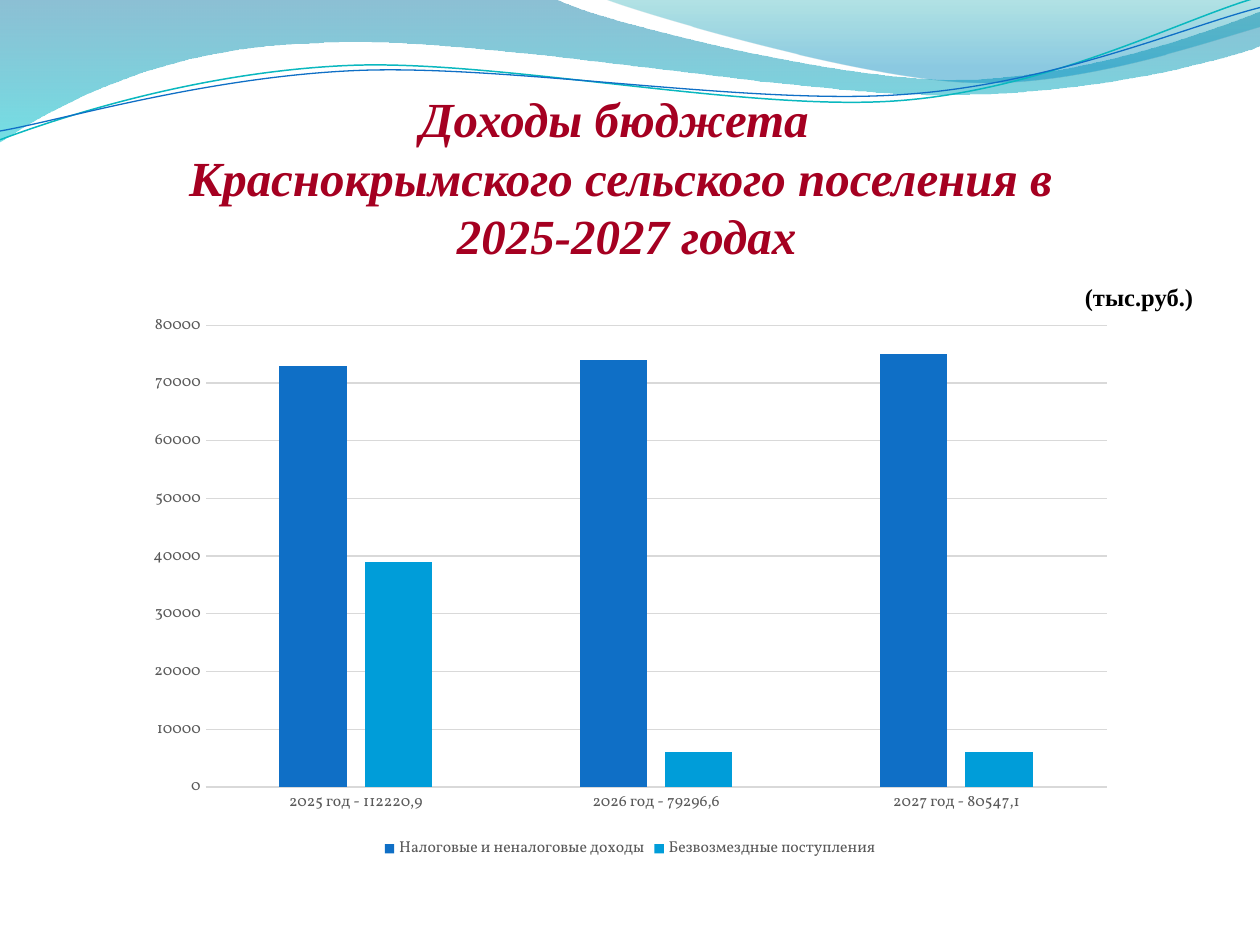
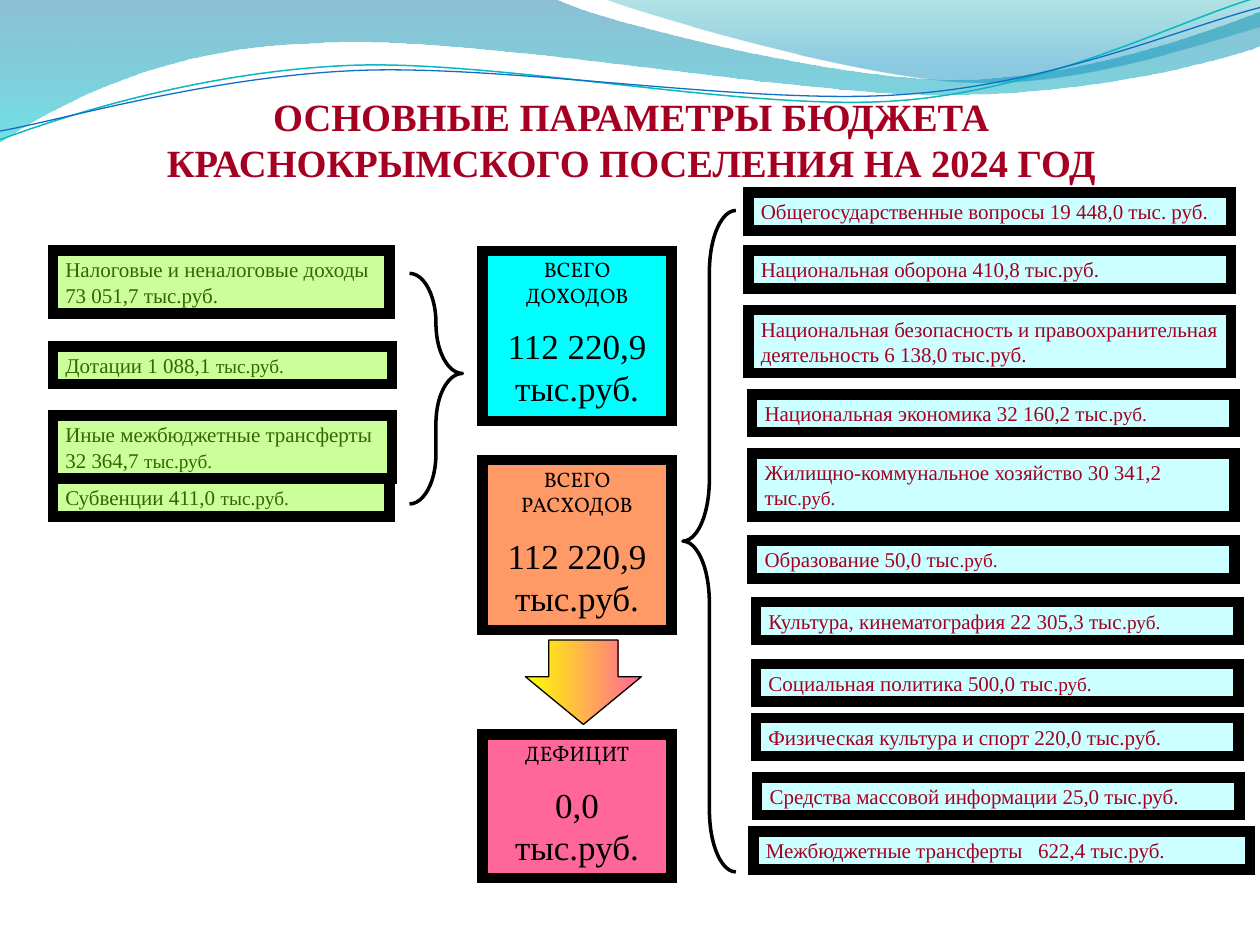
from typing import NamedTuple

from lxml import etree
from pptx import Presentation
from pptx.chart.data import CategoryChartData
from pptx.dml.color import RGBColor
from pptx.enum.chart import XL_CHART_TYPE, XL_LEGEND_POSITION, XL_TICK_MARK
from pptx.enum.shapes import MSO_SHAPE
from pptx.enum.text import MSO_ANCHOR, MSO_AUTO_SIZE, PP_ALIGN
from pptx.oxml.ns import qn
from pptx.util import Inches, Pt

CENTER, LEFT, RIGHT = PP_ALIGN.CENTER, PP_ALIGN.LEFT, PP_ALIGN.RIGHT
TOP, BOTTOM = MSO_ANCHOR.TOP, MSO_ANCHOR.BOTTOM
RECTANGLE, DOWN_ARROW = MSO_SHAPE.RECTANGLE, MSO_SHAPE.DOWN_ARROW
LEFT_BRACE, RIGHT_BRACE = MSO_SHAPE.LEFT_BRACE, MSO_SHAPE.RIGHT_BRACE
NO_TICKS = XL_TICK_MARK.NONE

SERIF, DISPLAY = "Times New Roman", "Vollkorn"
COLORS = {
    "title": "A50021", "black": "000000", "gray": "595959", "grid": "D9D9D9",
    "blue": "0F6FC6", "sky": "009DD9", "teal": "0AB8BF",
    "wave_top": "0074A1", "wave_bottom": "00C6CF",
    "crest_top": "00A1A9", "crest_bottom": "008BBF",
    "income": "CCFF99", "income_text": "336600", "expense": "CCFFFF",
    "cyan": "00FFFF", "orange": "FF9966", "pink": "FF6699", "yellow": "FFFF00",
}


class Stop(NamedTuple):
    position: float
    color: str
    opacity: int = 100


class Band(NamedTuple):
    """Each step holds one point (straight) or three (Bezier curve)."""
    start: tuple
    steps: list
    stops: tuple = ()
    line: str = ""
    width: float = 0


class Item(NamedTuple):
    left: float
    top: float
    text: str
    unit: str = ""
    lines: int = 1
    width: float = 3.83


class Total(NamedTuple):
    top: float
    height: float
    label: str
    amount: str
    color: str


BANDS = [
    Band((0, 0), [
        [(4.4, -0.01)],
        [(4.76, 0.17), (6.64, 0.63), (7.58, 0.63)],
        [(8.53, 0.63), (9.58, 0.26), (10, 0.09)],
        [(10.01, 0.36)],
        [(9.83, 0.44), (8.7, 0.76), (7.46, 0.75)],
        [(6.22, 0.75), (3.82, 0.28), (2.57, 0.34)],
        [(1.29, 0.36), (0.46, 0.83), (-0.01, 1.13)],
    ], stops=(Stop(0, "wave_top", 45), Stop(1, "wave_bottom", 55))),
    Band((4.79, -0.01), [
        [(5.09, 0.11), (6.82, 0.62), (7.69, 0.65)],
        [(8.56, 0.69), (9.61, 0.32), (10, 0.21)],
        [(10, 0)],
    ], stops=(Stop(0, "crest_top", 30), Stop(0.8, "crest_bottom", 45))),
    Band((0, 1.11), [
        [(0.48, 0.93), (1.58, 0.57), (2.77, 0.52)],
        [(3.95, 0.47), (5.93, 0.89), (7.13, 0.8)],
        [(8.33, 0.71), (9.38, 0.15), (9.98, -0.02)],
    ], line="teal", width=0.85),
    Band((0, 1.04), [
        [(0.47, 0.96), (1.64, 0.61), (2.83, 0.56)],
        [(4.03, 0.51), (5.97, 0.84), (7.17, 0.75)],
        [(8.36, 0.67), (9.41, 0.21), (10, 0.06)],
    ], line="blue", width=0.75),
]

INCOME_ITEMS = [
    Item(0.42, 1.99, "Налоговые и неналоговые доходы 73 051,7 тыс.руб.", lines=2, width=2.67),
    Item(0.42, 2.75, "Дотации 1 088,1 ", "тыс.руб.", width=2.69),
    Item(0.42, 3.3, "Иные межбюджетные трансферты 32 364,7 ", "тыс.руб.", 2, 2.69),
    Item(0.42, 3.8, "Субвенции 411,0 ", "тыс.руб.", width=2.67),
]
EXPENSE_ITEMS = [
    Item(5.94, 1.53, "Общегосударственные вопросы 19 448,0 тыс. руб."),
    Item(5.94, 1.99, "Национальная оборона 410,8 тыс.руб."),
    Item(5.94, 2.46, "Национальная безопасность и правоохранительная "
                     "деятельность 6 138,0 тыс.руб.", lines=2),
    Item(5.97, 3.13, "Национальная экономика 32 160,2 тыс", ".руб."),
    Item(5.97, 3.6, "Жилищно-коммунальное хозяйство 30 341,2 тыс", ".руб.", 2),
    Item(5.97, 4.29, "Образование 50,0 тыс", ".руб."),
    Item(6, 4.78, "Культура, кинематография 22 305,3 тыс", ".руб."),
    Item(6, 5.27, "Социальная политика 500,0 тыс", ".руб."),
    Item(6, 5.7, "Физическая культура и спорт 220,0 тыс.руб."),
    Item(6.01, 6.17, "Средства массовой информации 25,0 тыс.руб."),
    Item(5.98, 6.6, "Межбюджетные трансферты   622,4 тыс.руб.", width=3.94),
]
TOTALS = [
    Total(1.99, 1.35, "ВСЕГО ДОХОДОВ", "112 220,9 тыс.руб.", "cyan"),
    Total(3.65, 1.35, "ВСЕГО РАСХОДОВ", "112 220,9 тыс.руб.", "orange"),
    Total(5.83, 1.14, "ДЕФИЦИТ", "0,0 тыс.руб.", "pink"),
]


def rgb(name: str) -> RGBColor:
    return RGBColor.from_string(COLORS[name])


def set_font(font, size: float, color: str, name: str = SERIF,
             bold: bool = False, italic: bool = False) -> None:
    font.name, font.size = name, Pt(size)
    font.bold, font.italic = bold, italic
    font.color.rgb = rgb(color)


def set_line(line, color: str, width: float) -> None:
    line.color.rgb = rgb(color)
    line.width = Pt(width)


def set_gradient(shape, stops: tuple, angle: int) -> None:
    shape.fill.gradient()
    shape.fill.gradient_angle = angle
    for gradient_stop, stop in zip(shape.fill.gradient_stops, stops):
        gradient_stop.position = stop.position
        gradient_stop.color.rgb = rgb(stop.color)
    gradient = shape.element.spPr.find(qn("a:gradFill"))
    for color, stop in zip(gradient.iter(qn("a:srgbClr")), stops):
        if stop.opacity < 100:
            etree.SubElement(color, qn("a:alpha")).set("val", str(stop.opacity * 1000))


def add_band(slide, band: Band):
    """Build the outline from its corners, then bend the curved steps."""
    builder = slide.shapes.build_freeform(*map(Inches, band.start))
    corners = [tuple(map(Inches, step[-1])) for step in band.steps]
    builder.add_line_segments(corners, close=bool(band.stops))
    shape = builder.convert_to_shape()
    segments = list(shape.element.spPr.iter(qn("a:lnTo")))
    for segment, step in zip(segments, band.steps):
        if len(step) == 1:
            continue
        curve = etree.Element(qn("a:cubicBezTo"))
        for x, y in step:
            point = etree.SubElement(curve, qn("a:pt"))
            point.set("x", str(Inches(x) - shape.left))
            point.set("y", str(Inches(y) - shape.top))
        segment.getparent().replace(segment, curve)
    shape.shadow.inherit = False
    return shape


def add_bands(slide) -> None:
    """Draw the waves and move them to the layout that the slides share."""
    for index, band in enumerate(BANDS):
        shape = add_band(slide, band)
        if band.stops:
            set_gradient(shape, band.stops, 270)
            shape.line.fill.background()
        else:
            shape.fill.background()
            set_line(shape.line, band.line, band.width)
        shape.element.nvSpPr.cNvPr.set("id", str(100 + index))
        slide.slide_layout.shapes.element.insert(2 + index, shape.element)


def place_title(slide, left: float, top: float, width: float, height: float, anchor):
    title = slide.shapes.title
    title.left, title.top = Inches(left), Inches(top)
    title.width, title.height = Inches(width), Inches(height)
    frame = title.text_frame
    frame.word_wrap = True
    frame.auto_size = MSO_AUTO_SIZE.NONE
    frame.vertical_anchor = anchor
    return frame


def add_outlined(slide, kind, left: float, top: float, width: float, height: float,
                 line_width: float, adjustments: tuple = ()):
    shape = slide.shapes.add_shape(
        kind, Inches(left), Inches(top), Inches(width), Inches(height))
    shape.shadow.inherit = False
    shape.fill.background()
    set_line(shape.line, "black", line_width)
    for index, value in enumerate(adjustments):
        shape.adjustments[index] = value
    return shape


def add_box(slide, left: float, top: float, width: float, height: float, color: str):
    """Add a thickly framed rectangle and return its text frame."""
    shape = add_outlined(slide, RECTANGLE, left, top, width, height, 6)
    shape.fill.solid()
    shape.fill.fore_color.rgb = rgb(color)
    outline = shape.element.spPr.find(qn("a:ln"))
    etree.SubElement(outline, qn("a:miter")).set("lim", "800000")
    frame = shape.text_frame
    frame.word_wrap = True
    frame.vertical_anchor = TOP
    return frame


def add_item(slide, item: Item, fill: str, color: str) -> None:
    frame = add_box(slide, item.left, item.top, item.width, 0.1 + 0.2 * item.lines, fill)
    paragraph = frame.paragraphs[0]
    paragraph.alignment = LEFT
    for text, size in ((item.text, 12), (item.unit, 11)):
        if text:
            run = paragraph.add_run()
            run.text = text
            set_font(run.font, size, color)


def add_total(slide, total: Total) -> None:
    frame = add_box(slide, 3.83, total.top, 1.5, total.height, total.color)
    frame.text = f"{total.label}\n{total.amount}"
    label, amount = frame.paragraphs
    label.alignment = amount.alignment = CENTER
    amount.space_before = Pt(10)
    set_font(label.runs[0].font, 12, "black", DISPLAY)
    set_font(amount.runs[0].font, 20, "black")


def add_income_chart(slide) -> None:
    data = CategoryChartData()
    data.categories = ["2025 год - 112220,9", "2026 год - 79296,6", "2027 год - 80547,1"]
    data.add_series("Налоговые и неналоговые доходы", (73000, 74000, 75000))
    data.add_series("Безвозмездные поступления", (39000, 6000, 6000))
    chart = slide.shapes.add_chart(
        XL_CHART_TYPE.COLUMN_CLUSTERED, Inches(1.06), Inches(2.41),
        Inches(7.88), Inches(4.45), data).chart
    set_font(chart.font, 10, "black", DISPLAY)
    chart.has_title = False
    chart.has_legend = True
    chart.legend.position = XL_LEGEND_POSITION.BOTTOM
    chart.legend.include_in_layout = False
    plot = chart.plots[0]
    plot.gap_width, plot.overlap = 219, -27
    plot.vary_by_categories = False
    for series, color in zip(plot.series, ("blue", "sky")):
        series.format.fill.solid()
        series.format.fill.fore_color.rgb = rgb(color)
    categories, values = chart.category_axis, chart.value_axis
    for part in (categories.tick_labels, values.tick_labels, chart.legend):
        set_font(part.font, 9, "gray", DISPLAY)
    for axis in (categories, values):
        axis.major_tick_mark = axis.minor_tick_mark = NO_TICKS
    set_line(categories.format.line, "grid", 0.75)
    values.format.line.fill.background()
    values.minimum_scale, values.maximum_scale, values.major_unit = 0, 80000, 10000
    set_line(values.major_gridlines.format.line, "grid", 0.75)


def build_income_slide(slide) -> None:
    frame = place_title(slide, 0.28, 0.65, 9.29, 1.92, TOP)
    frame.text = ("Доходы бюджета \nКраснокрымского сельского поселения в\n"
                  " 2025-2027 годах\n ")
    for paragraph in frame.paragraphs:
        paragraph.alignment = CENTER
        set_font(paragraph.runs[0].font, 28, "title", bold=True, italic=True)
    units = frame.paragraphs[-1]
    units.alignment = RIGHT
    units.runs[0].font.size = Pt(24)
    run = units.add_run()
    run.text = "(тыс.руб.)"
    set_font(run.font, 14, "black", bold=True)
    add_income_chart(slide)


def build_parameters_slide(slide) -> None:
    frame = place_title(slide, 0.51, 1.02, 9, 0.45, BOTTOM)
    frame.margin_left = frame.margin_right = frame.margin_bottom = 0
    frame.text = "ОСНОВНЫЕ ПАРАМЕТРЫ БЮДЖЕТА КРАСНОКРЫМСКОГО ПОСЕЛЕНИЯ НА 2024 ГОД"
    frame.paragraphs[0].alignment = CENTER
    set_font(frame.paragraphs[0].runs[0].font, 22, "title", bold=True)
    for item in INCOME_ITEMS:
        add_item(slide, item, "income", "income_text")
    for item in EXPENSE_ITEMS:
        add_item(slide, item, "expense", "title")
    for total in TOTALS:
        add_total(slide, total)
    add_outlined(slide, RIGHT_BRACE, 3.25, 2.17, 0.42, 1.83, 2, (0.95, 0.434))
    add_outlined(slide, LEFT_BRACE, 5.42, 1.67, 0.42, 5.25, 2, (1.167, 0.5))
    arrow = add_outlined(slide, DOWN_ARROW, 4.17, 5.08, 0.92, 0.67, 0.75, (0.599, 0.565))
    set_gradient(arrow, (Stop(0, "yellow"), Stop(1, "pink")), 0)


def main() -> None:
    presentation = Presentation()
    presentation.slide_width, presentation.slide_height = Inches(10), Inches(7.5)
    title_only = presentation.slide_layouts[5]
    income, parameters = [presentation.slides.add_slide(title_only) for _ in range(2)]
    add_bands(income)
    build_income_slide(income)
    build_parameters_slide(parameters)
    presentation.save("out.pptx")


if __name__ == "__main__":
    main()
